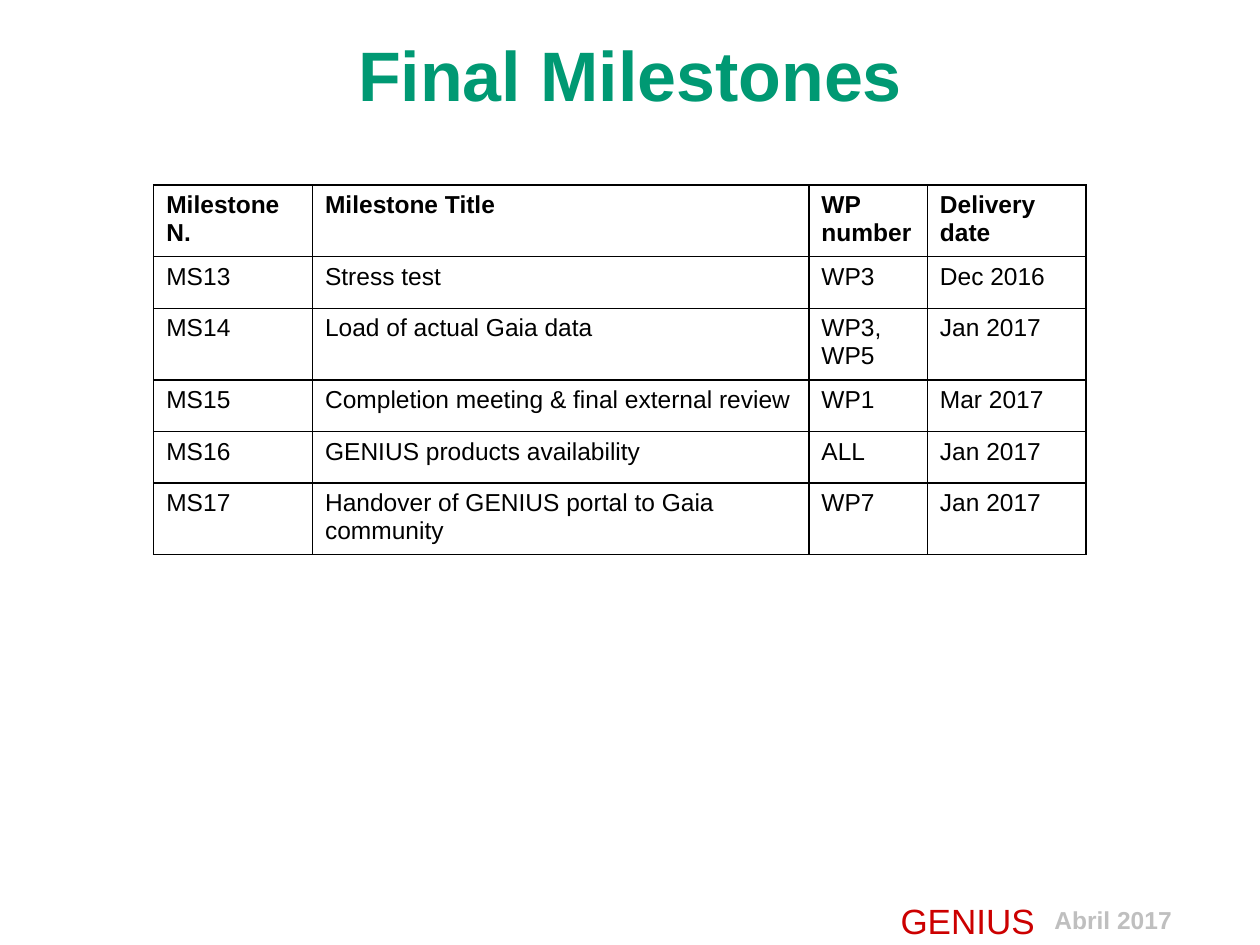
"""Build the Final Milestones slide with its table and footer."""
from lxml.etree import SubElement
from pptx import Presentation
from pptx.dml.color import RGBColor
from pptx.enum.text import MSO_ANCHOR, MSO_AUTO_SIZE, PP_ALIGN
from pptx.oxml.ns import qn
from pptx.util import Inches, Pt

THEME = {
    "title": {"size": Pt(40), "bold": True, "color": "009973"},
    "head": {"size": Pt(14), "bold": True, "color": "000000"},
    "cell": {"size": Pt(14), "bold": False, "color": "000000"},
    "date": {"size": Pt(14), "bold": True, "color": "BFBFBF"},
    "name": {"size": Pt(20), "bold": False, "color": "CC0000"},
    "face": "Arial",
    "rule": "000000",
}


def style(font, role):
    form = dict(THEME[role], name=THEME["face"])
    font.color.rgb = RGBColor.from_string(form.pop("color"))
    for key, value in form.items():
        setattr(font, key, value)


def border(cell):
    props = cell._tc.get_or_add_tcPr()
    for side in ("lnL", "lnR", "lnT", "lnB"):
        line = SubElement(props, qn(f"a:{side}"), w=str(Pt(1)))
        fill = SubElement(line, qn("a:solidFill"))
        SubElement(fill, qn("a:srgbClr"), val=THEME["rule"])


deck = Presentation()
deck.slide_width, deck.slide_height = Inches(10), Inches(7.5)
slide = deck.slides.add_slide(deck.slide_layouts[5])

footer = [
    ("Abril 2017", "date", 8.27, 1.69, 0.34, {"alignment": PP_ALIGN.LEFT}),
    ("GENIUS", "name", 6.97, 1.42, 0.4,
     {"alignment": PP_ALIGN.CENTER, "line_spacing": 0.9}),
]
for text, role, left, width, height, form in footer:
    box = slide.shapes.add_textbox(
        Inches(left), Inches(7.13), Inches(width), Inches(height))
    frame = box.text_frame
    frame.text = text
    frame.word_wrap = True
    frame.auto_size = MSO_AUTO_SIZE.SHAPE_TO_FIT_TEXT
    para = frame.paragraphs[0]
    for key, value in form.items():
        setattr(para, key, value)
    style(para.runs[0].font, role)

title = slide.shapes.title
place = {"left": 0.5, "top": 0.13, "width": 9, "height": 0.9}
for key, value in place.items():
    setattr(title, key, Inches(value))
title.text_frame.text = "Final Milestones"
title.text_frame.vertical_anchor = MSO_ANCHOR.MIDDLE
para = title.text_frame.paragraphs[0]
para.alignment = PP_ALIGN.CENTER
style(para.runs[0].font, "title")

rows = [
    ("Milestone N.", "Milestone Title", "WP number", "Delivery date"),
    ("MS13", "Stress test", "WP3", "Dec 2016"),
    ("MS14", "Load of actual Gaia data", "WP3, WP5", "Jan 2017"),
    ("MS15", "Completion meeting & final external review", "WP1", "Mar 2017"),
    ("MS16", "GENIUS products availability", "ALL", "Jan 2017"),
    ("MS17", "Handover of GENIUS portal to Gaia community", "WP7", "Jan 2017"),
]
widths = [1.26, 3.94, 0.94, 1.26]
high = 0.41
table = slide.shapes.add_table(
    len(rows), len(widths), Inches(1.22), Inches(1.47),
    Inches(sum(widths)), Inches(high * len(rows))).table
table.horz_banding = False
for col, width in zip(table.columns, widths):
    col.width = Inches(width)
for r, row in enumerate(rows):
    table.rows[r].height = Inches(high)
    for c, text in enumerate(row):
        cell = table.cell(r, c)
        cell.text = text
        border(cell)
        cell.fill.background()
        style(cell.text_frame.paragraphs[0].runs[0].font,
              "cell" if r else "head")

deck.save("out.pptx")
